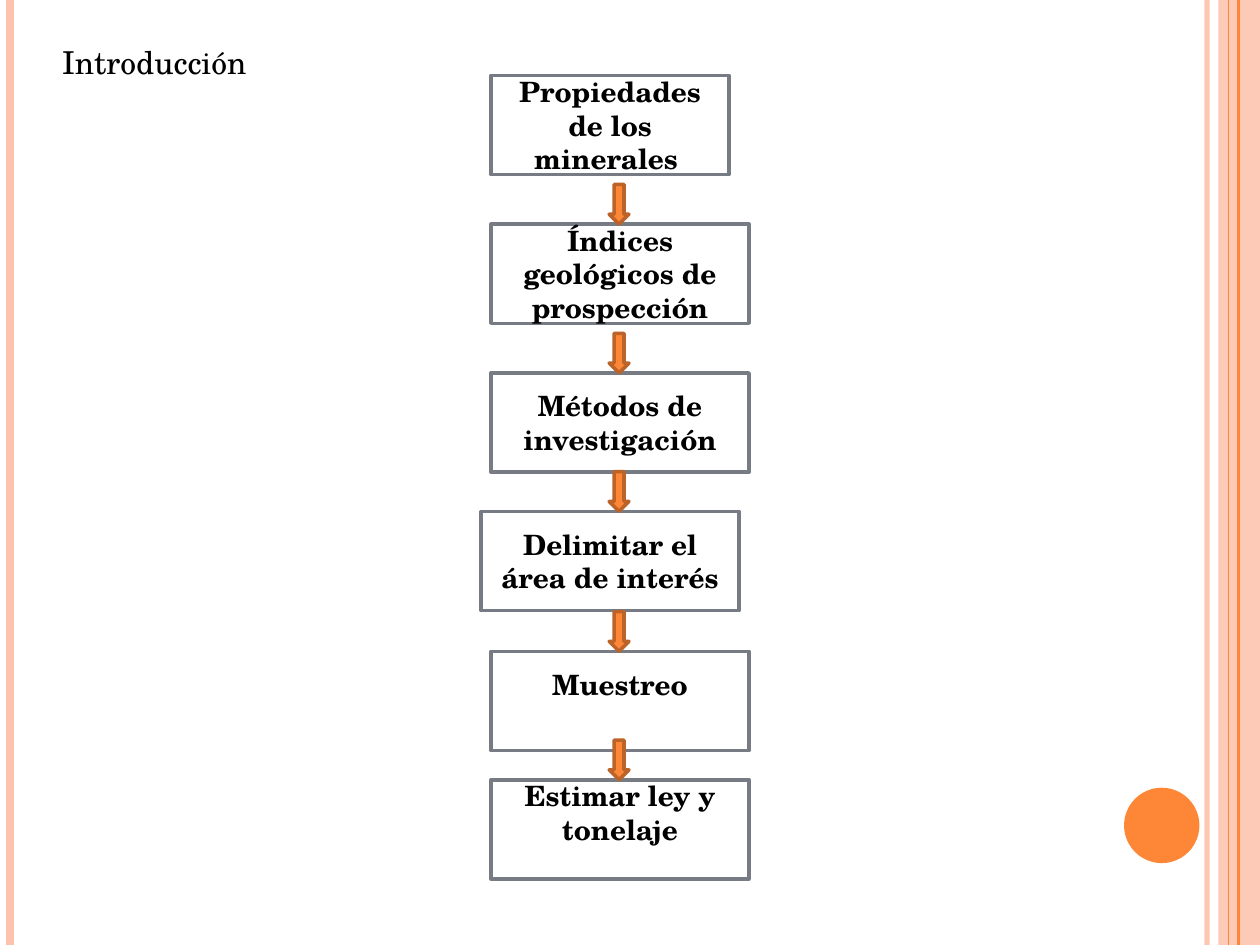
from dataclasses import dataclass

import pptx
import pptx.dml.color
import pptx.enum.shapes
import pptx.enum.text
import pptx.oxml
import pptx.oxml.ns
import pptx.util
from pptx.util import Cm

FONT = "TeX Gyre Schola"
COLORS = {
    "text": "000000",
    "paper": "FFFFFF",
    "border": "777C84",
    "orange": "FE8637",
    "dark_orange": "BC6329",
    "peach": "FEC3AE",
}
SHAPES = pptx.enum.shapes.MSO_SHAPE
ANCHOR = pptx.enum.text.MSO_ANCHOR
ALIGN = pptx.enum.text.PP_ALIGN
PAGE_WIDTH, PAGE_HEIGHT = 25.4, 19.05
BOX_HEIGHT = 2.0
LINE_HEIGHT = 0.68
ARROW_CENTER, ARROW_WIDTH, ARROW_HEIGHT = 12.48, 0.4, 0.8


@dataclass
class Stripe:
    x: float
    weight: float
    color: str
    opacity: int = 100


@dataclass
class Step:
    text: str
    top: float
    left: float = 9.9
    width: float = 5.2
    raised: bool = False


STRIPES = [
    Stripe(24.33, 3, "peach", 93),
    Stripe(0.2, 4.5, "peach"),
    Stripe(24.97, 1.5, "orange"),
    Stripe(24.77, 0.75, "orange"),
]
STEPS = [
    Step("Propiedades de los minerales ", 1.52, width=4.8),
    Step("Índices geológicos de prospección", 4.52),
    Step("Métodos de investigación", 7.52),
    Step("Delimitar el área de interés", 10.31, left=9.7),
    Step("Muestreo", 13.13, raised=True),
    Step("Estimar ley y tonelaje", 15.72, raised=True),
]


def rgb(name: str) -> pptx.dml.color.RGBColor:
    return pptx.dml.color.RGBColor.from_string(COLORS[name])


def set_opacity(element, percent: int) -> None:
    color = element.find(".//" + pptx.oxml.ns.qn("a:srgbClr"))
    color.append(pptx.oxml.parse_xml(
        f'<a:alpha {pptx.oxml.ns.nsdecls("a")} val="{percent * 1000}"/>'))


def format_text(para, size: float, bold: bool = False) -> None:
    for span in para.runs:
        span.font.name = FONT
        span.font.size = pptx.util.Pt(size)
        span.font.bold = bold
        span.font.color.rgb = rgb("text")


def draw_shape(page, kind, left: float, top: float, width: float, height: float,
               fill: str, line: str = ""):
    shape = page.shapes.add_shape(kind, Cm(left), Cm(top), Cm(width), Cm(height))
    shape.shadow.inherit = False
    shape.fill.solid()
    shape.fill.fore_color.rgb = rgb(fill)
    if line:
        shape.line.color.rgb = rgb(line)
        shape.line.width = pptx.util.Pt(2)
    else:
        shape.line.fill.background()
    return shape


def draw_stripe(page, stripe: Stripe) -> None:
    line = page.shapes.add_connector(
        pptx.enum.shapes.MSO_CONNECTOR.STRAIGHT,
        Cm(stripe.x), Cm(0), Cm(stripe.x), Cm(PAGE_HEIGHT))
    line.line.color.rgb = rgb(stripe.color)
    line.line.width = pptx.util.Pt(stripe.weight)
    properties = line._element.spPr
    if stripe.opacity < 100:
        set_opacity(properties, stripe.opacity)
    properties.append(pptx.oxml.parse_xml(
        f'<a:effectLst {pptx.oxml.ns.nsdecls("a")}/>'))


def draw_step(page, step: Step) -> None:
    box = draw_shape(page, SHAPES.RECTANGLE, step.left, step.top, step.width,
                     BOX_HEIGHT, "paper", "border")
    frame = box.text_frame
    frame.word_wrap = True
    frame.vertical_anchor = ANCHOR.MIDDLE
    frame.margin_top = Cm(0)
    frame.margin_bottom = Cm(LINE_HEIGHT if step.raised else 0)
    frame.text = step.text
    para = frame.paragraphs[0]
    para.alignment = ALIGN.CENTER
    format_text(para, 16, bold=True)


def draw_arrow_into(page, step: Step) -> None:
    draw_shape(page, SHAPES.DOWN_ARROW, ARROW_CENTER - ARROW_WIDTH / 2,
               step.top - ARROW_HEIGHT, ARROW_WIDTH, ARROW_HEIGHT,
               "orange", "dark_orange")


def set_title(page, text: str) -> None:
    title = page.shapes.title
    title.left, title.top, title.width, title.height = Cm(1), Cm(0.74), Cm(8), Cm(1.1)
    frame = title.text_frame
    frame.word_wrap = True
    frame.vertical_anchor = ANCHOR.TOP
    frame.text = text
    frame.paragraphs[0].alignment = ALIGN.LEFT
    format_text(frame.paragraphs[0], 18)


def main() -> None:
    deck = pptx.Presentation()
    deck.slide_width, deck.slide_height = Cm(PAGE_WIDTH), Cm(PAGE_HEIGHT)
    page = deck.slides.add_slide(deck.slide_layouts[5])

    # Side decoration
    band = draw_shape(page, SHAPES.RECTANGLE, 24.56, 0, 0.84, PAGE_HEIGHT, "peach")
    set_opacity(band._element.spPr, 87)
    for stripe in STRIPES:
        draw_stripe(page, stripe)
    draw_shape(page, SHAPES.OVAL, 22.66, 15.88, 1.52, 1.52, "orange")

    # Title and flow of steps
    set_title(page, "Introducción")
    for step in STEPS:
        draw_step(page, step)
    for step in STEPS[1:]:
        draw_arrow_into(page, step)

    deck.save("out.pptx")


if __name__ == "__main__":
    main()
